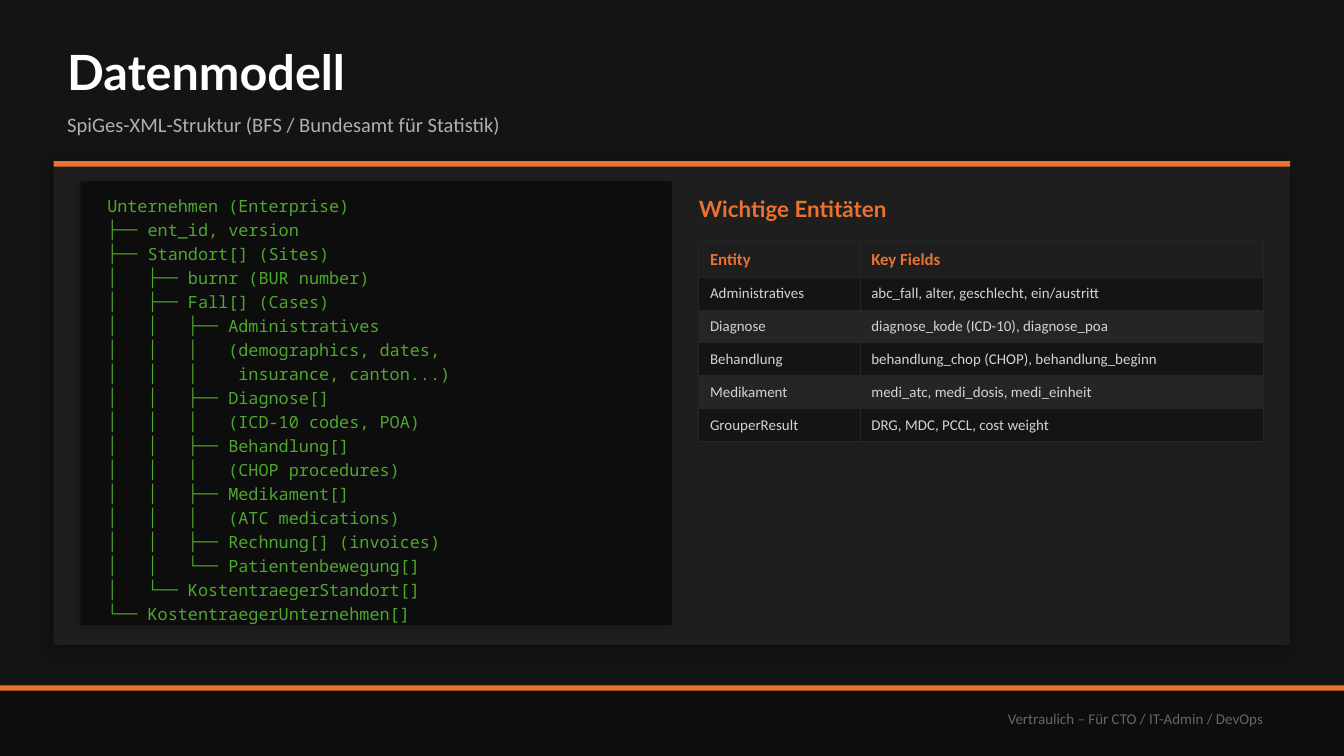
from lxml.etree import SubElement
from pptx import Presentation
from pptx.dml.color import RGBColor
from pptx.enum.shapes import MSO_SHAPE
from pptx.enum.text import MSO_ANCHOR, PP_ALIGN
from pptx.oxml.ns import qn
from pptx.util import Inches, Pt

BACKGROUND = RGBColor(0x14, 0x14, 0x14)
DEEP = RGBColor(0x0D, 0x0D, 0x0D)
PANEL = RGBColor(0x1E, 0x1E, 0x1E)
BAND = RGBColor(0x25, 0x25, 0x25)
ORANGE = RGBColor(0xE9, 0x71, 0x32)
GREEN = RGBColor(0x4E, 0xA7, 0x2E)
WHITE = RGBColor(0xFF, 0xFF, 0xFF)
LIGHT = RGBColor(0xD4, 0xD4, 0xD4)
SILVER = RGBColor(0xB0, 0xB0, 0xB0)
GREY = RGBColor(0x66, 0x66, 0x66)
BLACK = RGBColor(0, 0, 0)

HEADING = "Lato"
BODY = "Calibri"
CODE = "Noto Sans Mono"

COLUMNS = 100
STRIPE = 0.4

STRUCTURE = """\
Unternehmen (Enterprise)
├── ent_id, version
├── Standort[] (Sites)
│   ├── burnr (BUR number)
│   ├── Fall[] (Cases)
│   │   ├── Administratives
│   │   │   (demographics, dates,
│   │   │    insurance, canton...)
│   │   ├── Diagnose[]
│   │   │   (ICD-10 codes, POA)
│   │   ├── Behandlung[]
│   │   │   (CHOP procedures)
│   │   ├── Medikament[]
│   │   │   (ATC medications)
│   │   ├── Rechnung[] (invoices)
│   │   └── Patientenbewegung[]
│   └── KostentraegerStandort[]
└── KostentraegerUnternehmen[]"""

ENTITIES = [
    ("Entity", "Key Fields"),
    ("Administratives", "abc_fall, alter, geschlecht, ein/austritt"),
    ("Diagnose", "diagnose_kode (ICD-10), diagnose_poa"),
    ("Behandlung", "behandlung_chop (CHOP), behandlung_beginn"),
    ("Medikament", "medi_atc, medi_dosis, medi_einheit"),
    ("GrouperResult", "DRG, MDC, PCCL, cost weight"),
]


class DarkSlide:
    def __init__(self, presentation):
        self.unit = presentation.slide_width / COLUMNS
        self.slide = presentation.slides.add_slide(presentation.slide_layouts[6])
        background = self.slide.background.fill
        background.solid()
        background.fore_color.rgb = BACKGROUND

    def grid(self, *cells):
        return [round(cell * self.unit) for cell in cells]

    def style(self, font, size, color, face=BODY, bold=False):
        font.size = Pt(size)
        font.name = face
        font.bold = bold
        font.color.rgb = color

    def block(self, area, color, shadow=None):
        block = self.slide.shapes.add_shape(MSO_SHAPE.RECTANGLE, *self.grid(*area))
        block.fill.solid()
        block.fill.fore_color.rgb = color
        block.line.fill.background()
        block.shadow.inherit = False
        if shadow:
            opacity, blur, distance = shadow
            effects = block._element.spPr.find(qn("a:effectLst"))
            outer = SubElement(effects, qn("a:outerShdw"), blurRad=str(Pt(blur)),
                               dist=str(Pt(distance)), dir=str(135 * 60000),
                               algn="bl", rotWithShape="0")
            shade = SubElement(outer, qn("a:srgbClr"), val=str(BLACK))
            SubElement(shade, qn("a:alpha"), val=str(opacity * 1000))

    def frame(self, area, inset=True, anchor=MSO_ANCHOR.MIDDLE):
        frame = self.slide.shapes.add_textbox(*self.grid(*area)).text_frame
        frame.word_wrap = True
        frame.vertical_anchor = anchor
        if not inset:
            frame.margin_left = frame.margin_right = 0
            frame.margin_top = frame.margin_bottom = 0
        return frame

    def text(self, area, words, *style, inset=False, align=PP_ALIGN.LEFT):
        paragraph = self.frame(area, inset).paragraphs[0]
        paragraph.text = words
        paragraph.alignment = align
        self.style(paragraph.font, *style)

    def code(self, area, listing):
        frame = self.frame(area, anchor=MSO_ANCHOR.TOP)
        frame.text = listing
        for paragraph in frame.paragraphs:
            paragraph.space_after = Pt(2)
            self.style(paragraph.font, 9, GREEN, CODE)

    def cell(self, cell, words, fill, *style):
        cell.text = words
        cell.vertical_anchor = MSO_ANCHOR.MIDDLE
        cell.margin_left = cell.margin_right = Pt(6)
        cell.margin_top = cell.margin_bottom = Pt(4)
        self.style(cell.text_frame.paragraphs[0].font, *style)
        properties = cell._tc.get_or_add_tcPr()
        for side in ("lnL", "lnR", "lnT", "lnB"):
            border = SubElement(properties, qn(f"a:{side}"), w=str(Pt(0.5)))
            stroke = SubElement(border, qn("a:solidFill"))
            SubElement(stroke, qn("a:srgbClr"), val=str(BAND))
        cell.fill.solid()
        cell.fill.fore_color.rgb = fill

    def table(self, area, widths, rows):
        table = self.slide.shapes.add_table(
            len(rows), len(widths), *self.grid(*area)).table
        for column, width in zip(table.columns, self.grid(*widths)):
            column.width = width
        for index, entries in enumerate(rows):
            if index == 0:
                fill, style = PANEL, (9, ORANGE, BODY, True)
            else:
                fill, style = (BACKGROUND if index % 2 else BAND), (8, LIGHT)
            for cell, words in zip(table.rows[index].cells, entries):
                self.cell(cell, words, fill, *style)


def main():
    presentation = Presentation()
    presentation.slide_width = Inches(10)
    presentation.slide_height = Inches(5.625)
    page = DarkSlide(presentation)

    page.block((0, 51, COLUMNS, 5.25), DEEP)
    page.block((0, 51, COLUMNS, STRIPE), ORANGE)
    page.text((55, 51.5, 40, 4), "Vertraulich – Für CTO / IT-Admin / DevOps",
              8, GREY, inset=True, align=PP_ALIGN.RIGHT)

    page.text((5, 2.5, 90, 5.5), "Datenmodell", 26, WHITE, HEADING, True)
    page.text((5, 7.5, 90, 3.5),
              "SpiGes-XML-Struktur (BFS / Bundesamt für Statistik)", 11, SILVER)

    page.block((4, 12, 92, 36), PANEL, shadow=(35, 8, 3))
    page.block((4, 12, 92, STRIPE), ORANGE)
    page.block((6, 13.5, 44, 33), DEEP, shadow=(20, 4, 2))
    page.code((7, 14.1, 42, 31.8), STRUCTURE)

    page.text((52, 14, 42, 3), "Wichtige Entitäten", 12, ORANGE, HEADING, True)
    page.table((52, 18, 42, 10), (12, 30), ENTITIES)

    presentation.save("out.pptx")


if __name__ == "__main__":
    main()
